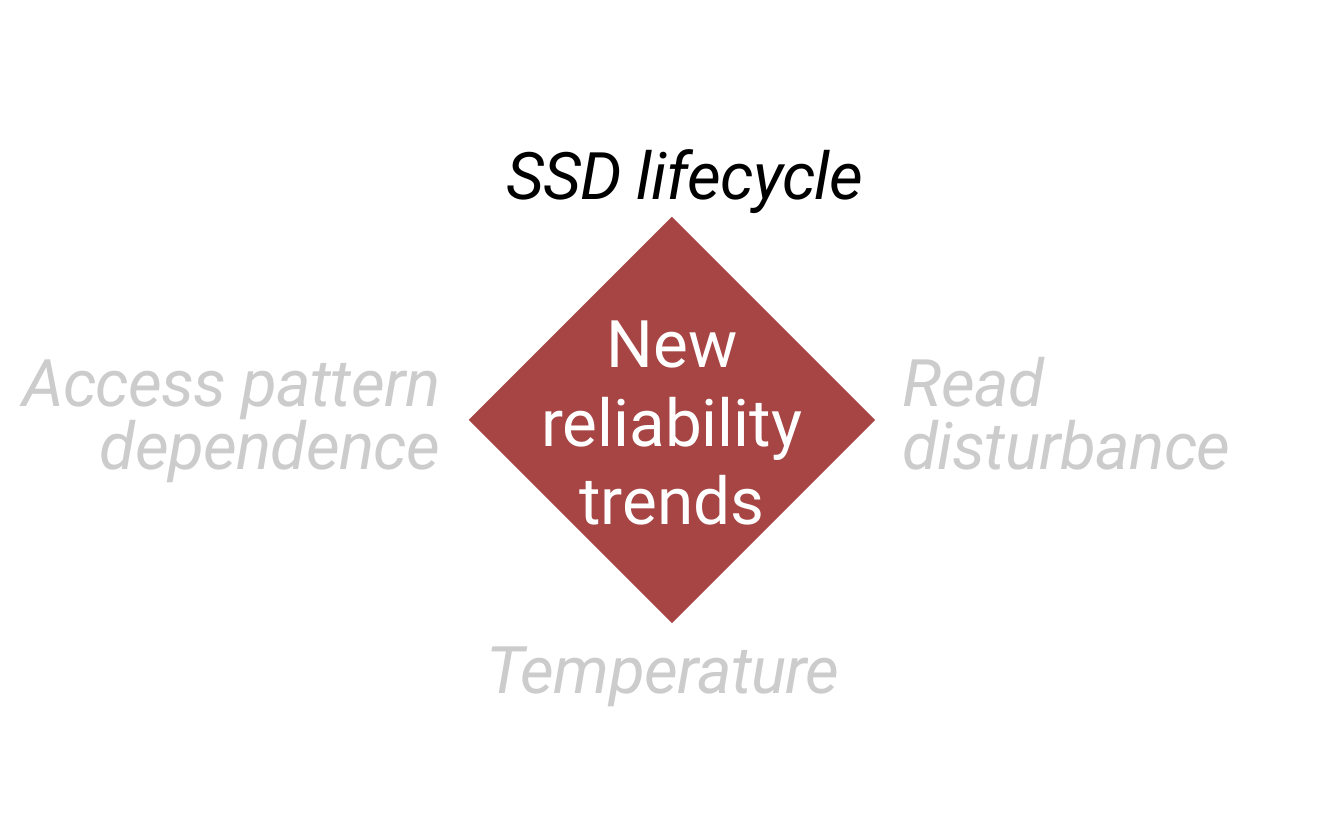
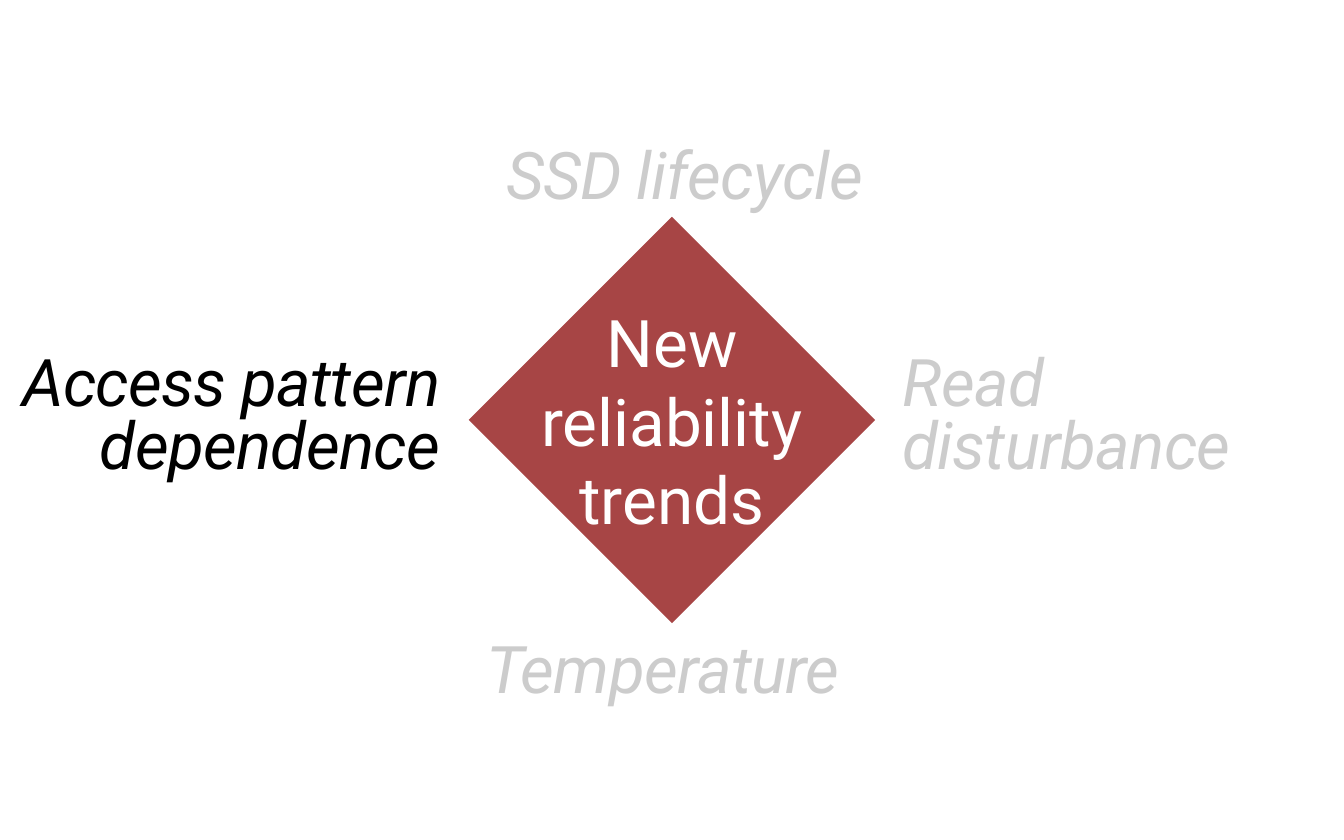
"""Build two slides that highlight SSD reliability trends around a diamond."""
from pptx import Presentation
from pptx.dml.color import RGBColor
from pptx.enum.shapes import MSO_SHAPE as Shape
from pptx.enum.text import MSO_ANCHOR as Anchor, MSO_AUTO_SIZE as AutoSize, PP_ALIGN as Align
from pptx.oxml.ns import qn
from pptx.oxml.xmlchemy import OxmlElement
from pptx.util import Inches, Pt

BLACK, WHITE, RED = "000000", "FFFFFF", "A74545"
LABELS = {
    "Access pattern\ndependence": (0.98, 41.4, 32.2, 17.1, Align.RIGHT, 0.8),
    "Read\ndisturbance": (66.74, 41.4, 26.65, 17.1, Align.LEFT, 0.8),
    "Temperature": (35.8, 74.58, 28.4, 9.8, Align.LEFT, 1.0),
    "SSD lifecycle": (37, 15.75, 27.9, 9.8, Align.CENTER, 1.0),
}
HIGHLIGHTS = ["SSD lifecycle", "Access pattern\ndependence"]

presentation = Presentation()
presentation.slide_width = width = Inches(14.22)
presentation.slide_height = height = Inches(8.89)


def place(left, top, across, down):
    """Turn percentages of the slide into lengths."""
    return [int(share * side / 100) for share, side in
            ((left, width), (top, height), (across, width), (down, height))]


def write(shape, text, color, align, inset):
    """Fill a shape with one middle-anchored paragraph and return it."""
    frame = shape.text_frame
    frame.vertical_anchor = Anchor.MIDDLE
    frame.margin_left = frame.margin_right = Inches(inset)
    frame.margin_top = frame.margin_bottom = Inches(0.06)
    paragraph = frame.paragraphs[0]
    paragraph.text = text
    paragraph.alignment = align
    paragraph.font.name = "Roboto"
    paragraph.font.size = Pt(50)
    paragraph.font.color.rgb = RGBColor.from_string(color)
    return paragraph


for highlight in HIGHLIGHTS:
    slide = presentation.slides.add_slide(presentation.slide_layouts[6])

    for text in [label for label in LABELS if label != highlight] + [highlight]:
        if text == highlight:
            veil = slide.shapes.add_shape(Shape.RECTANGLE, *place(0, 12.7, 100, 74.5))
            veil.shadow.inherit = False
            veil.line.fill.background()
            veil.fill.solid()
            veil.fill.fore_color.rgb = RGBColor.from_string(WHITE)
            alpha = OxmlElement("a:alpha")
            alpha.set("val", "80000")
            veil.fill._xPr.find(qn("a:solidFill"))[0].append(alpha)
        *box, align, spacing = LABELS[text]
        label = slide.shapes.add_textbox(*place(*box))
        paragraph = write(label, text, BLACK, align, 0.06)
        paragraph.line_spacing = spacing
        paragraph.font.italic = True
        paragraph._p.pPr.find(qn("a:defRPr")).set("spc", "-50")
        label.text_frame.word_wrap = False
        label.text_frame.auto_size = AutoSize.SHAPE_TO_FIT_TEXT

    center_x, center_y, reach = width // 2, height // 2, Inches(2.15)
    outline = slide.shapes.build_freeform(center_x - reach, center_y)
    outline.add_line_segments([(center_x, center_y + reach), (center_x + reach, center_y),
                               (center_x, center_y - reach)])
    diamond = outline.convert_to_shape()
    diamond.shadow.inherit = False
    diamond.line.fill.background()
    diamond.fill.solid()
    diamond.fill.fore_color.rgb = RGBColor.from_string(RED)
    write(diamond, "New reliability trends", WHITE, Align.CENTER, 0.5)
    diamond.text_frame.word_wrap = True

presentation.save("out.pptx")
